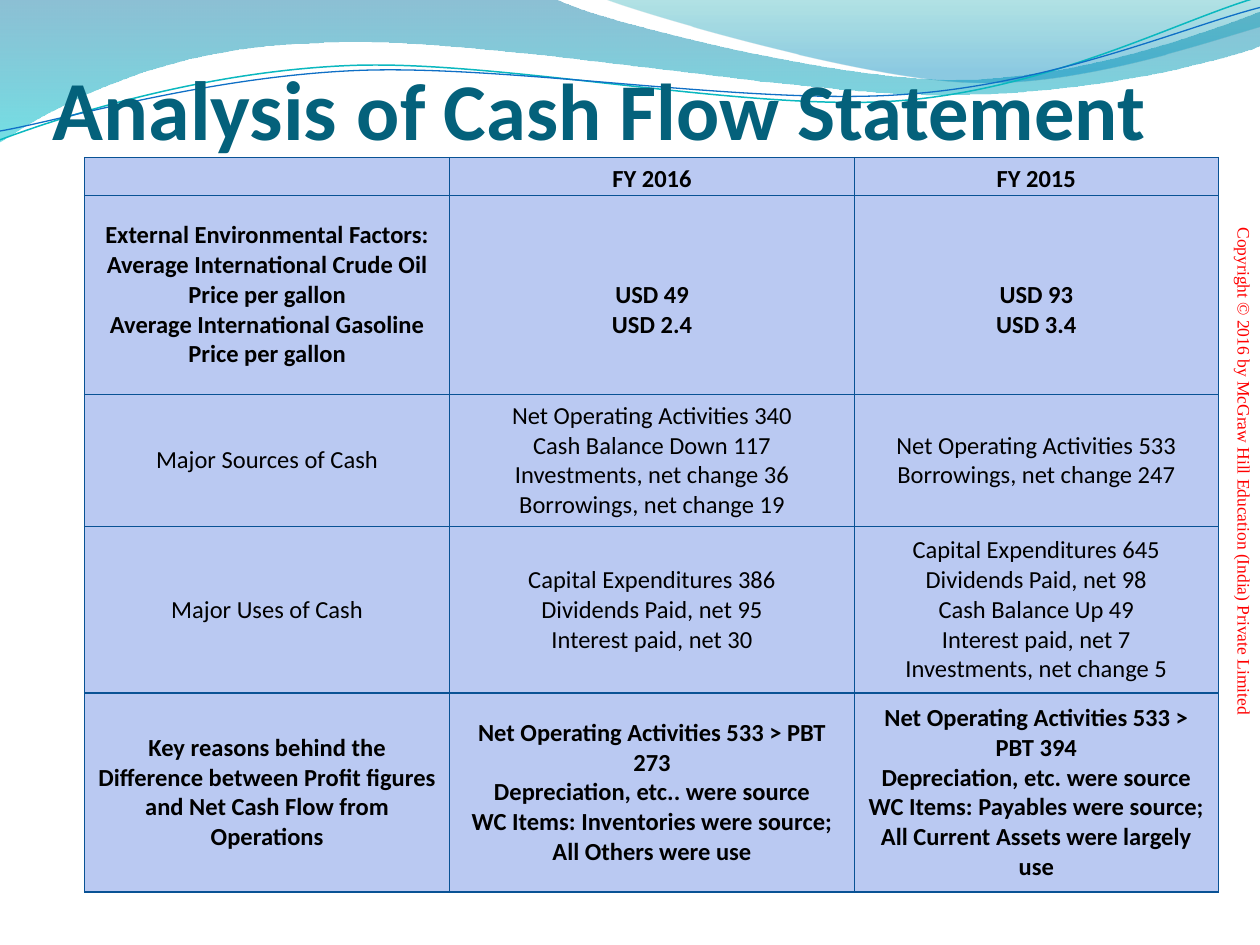
import math
from dataclasses import dataclass

import pptx
import pptx.dml.color
import pptx.enum.text
import pptx.oxml
import pptx.oxml.ns
import pptx.util
from pptx.util import Inches

ALIGN = pptx.enum.text.PP_ALIGN
ANCHOR = pptx.enum.text.MSO_ANCHOR
NAMESPACE = pptx.oxml.ns.nsdecls("a")


@dataclass(frozen=True)
class Theme:
    title: str = "04617B"
    body: str = "000000"
    copyright: str = "FF0000"
    cell: str = "BAC9F2"
    border: str = "095295"
    font: str = "Calibri"
    side_font: str = "Times New Roman"
    title_lead_size: int = 48
    title_size: int = 46
    body_size: int = 14
    side_size: int = 10
    border_width: float = 0.75


THEME = Theme()

# Each outline is a start point, then lines (x, y) or curves (x1, y1, x2, y2, x, y).
# Gradient stops are (position, colour, opacity in percent).
BANDS = [
    ([(0, 0), (4.4, -0.01), (4.76, 0.17, 6.64, 0.63, 7.58, 0.63),
      (8.53, 0.63, 9.58, 0.26, 10, 0.09), (10.01, 0.36),
      (9.83, 0.44, 8.7, 0.76, 7.46, 0.75), (6.22, 0.75, 3.82, 0.28, 2.57, 0.34),
      (1.29, 0.36, 0.46, 0.83, -0.01, 1.13), (0, 0)],
     [(0, "0074A1", 45), (1, "00C6CF", 55)]),
    ([(4.79, -0.01), (5.09, 0.11, 6.82, 0.62, 7.69, 0.65),
      (8.56, 0.69, 9.61, 0.32, 10, 0.21), (10, 0), (4.79, -0.01)],
     [(0, "00A1A9", 30), (0.8, "008BBF", 45)]),
]
# Strands tilt around a pivot; their outlines are given as tilted.
TILT = 357.3
STRANDS = [
    ([(0, 1.11), (0.48, 0.93, 1.58, 0.57, 2.77, 0.52),
      (3.95, 0.47, 5.93, 0.89, 7.13, 0.8), (8.33, 0.71, 9.38, 0.15, 9.98, -0.02)],
     (4.99, 0.57), "0AB8BF", 0.85),
    ([(0, 1.04), (0.47, 0.96, 1.64, 0.61, 2.83, 0.56),
      (4.03, 0.51, 5.97, 0.84, 7.17, 0.75), (8.36, 0.67, 9.41, 0.21, 10, 0.06)],
     (5, 0.59), "0F6FC6", 0.75),
]

COLUMNS = [2.9, 3.21, 2.89]
# Each row is its height, whether it is bold, and the paragraphs of its cells.
ROWS = [
    (0.3, True, [[""], ["FY 2016"], ["FY 2015"]]),
    (1.58, True, [
        ["External Environmental Factors:",
         "Average International Crude Oil Price per gallon",
         "Average International Gasoline Price per gallon"],
        ["USD 49", "USD 2.4"],
        ["USD 93", "USD 3.4"]]),
    (1.05, False, [
        ["Major Sources of Cash"],
        ["Net Operating Activities 340", "Cash Balance Down 117",
         "Investments, net change 36", "Borrowings, net change 19"],
        ["Net Operating Activities 533", "Borrowings, net change 247"]]),
    (1.32, False, [
        ["Major Uses of Cash"],
        ["Capital Expenditures 386", "Dividends Paid, net 95", "Interest paid, net 30"],
        ["Capital Expenditures 645", "Dividends Paid, net 98", "Cash Balance Up 49",
         "Interest paid, net 7", "Investments, net change 5"]]),
    (1.58, True, [
        ["Key reasons behind the Difference between Profit figures and Net Cash Flow "
         "from Operations"],
        ["Net Operating Activities 533 > PBT 273", "Depreciation, etc.. were source",
         "WC Items: Inventories were source; All Others were use"],
        ["Net Operating Activities 533 > PBT 394", "Depreciation, etc. were source",
         "WC Items: Payables were source; All Current Assets were largely use"]]),
]
PRICE_ROW = 1


def rgb(value):
    return pptx.dml.color.RGBColor.from_string(value)


def apply(target, values):
    for name, value in values.items():
        setattr(target, name, value)


def add_span(para, text, size, color, font=THEME.font, bold=False):
    span = para.add_run()
    span.text = text
    apply(span.font, {"name": font, "size": pptx.util.Pt(size), "bold": bold})
    span.font.color.rgb = rgb(color)


def turn(outline, pivot, degrees):
    """Turn every point of an outline clockwise around the pivot."""
    sine, cosine = math.sin(math.radians(degrees)), math.cos(math.radians(degrees))
    turned = []
    for segment in outline:
        offsets = [(x - pivot[0], y - pivot[1])
                   for x, y in zip(segment[::2], segment[1::2])]
        turned.append([n for x, y in offsets for n in
                       (pivot[0] + x * cosine - y * sine,
                        pivot[1] + x * sine + y * cosine)])
    return turned


def add_outline(page, box, outline, close):
    """Draw all points as lines, then join the points of each curve into one node."""
    left, top = box
    points = [(left + Inches(x), top + Inches(y)) for segment in outline
              for x, y in zip(segment[::2], segment[1::2])]
    builder = page.shapes.build_freeform(*points[0])
    builder.add_line_segments(points[1:], close=close)
    shape = builder.convert_to_shape()
    shape.shadow.inherit = False
    nodes = iter(list(shape._element.iter(pptx.oxml.ns.qn("a:lnTo"))))
    for segment in outline[1:]:
        first = next(nodes)
        if len(segment) == 6:
            curve = pptx.oxml.parse_xml(f"<a:cubicBezTo {NAMESPACE}/>")
            first.addprevious(curve)
            for node in (first, next(nodes), next(nodes)):
                curve.append(node[0])
                node.getparent().remove(node)
    return shape


def add_waves(page, box):
    for outline, stops in BANDS:
        band = add_outline(page, box, outline, True)
        band.line.fill.background()
        band.fill.gradient()
        band.fill.gradient_angle = 270
        for stop, (position, color, _) in zip(band.fill.gradient_stops, stops):
            stop.position = position
            stop.color.rgb = rgb(color)
        colors = band._element.spPr.iter(pptx.oxml.ns.qn("a:srgbClr"))
        for node, (_, _, opacity) in zip(colors, stops):
            node.append(pptx.oxml.parse_xml(
                f'<a:alpha {NAMESPACE} val="{opacity * 1000}"/>'))
    for outline, pivot, color, width in STRANDS:
        strand = add_outline(page, box, turn(outline, pivot, 360 - TILT), False)
        strand.rotation = TILT
        strand.fill.background()
        strand.line.color.rgb = rgb(color)
        strand.line.width = pptx.util.Pt(width)


def add_copyright(page, box):
    holder = page.shapes.add_textbox(*box)
    holder.rotation = 90
    apply(holder.text_frame, {"word_wrap": True, "vertical_anchor": ANCHOR.BOTTOM})
    para = holder.text_frame.paragraphs[0]
    para.alignment = ALIGN.CENTER
    add_span(para, "Copyright © 2016 by McGraw Hill Education (India) Private Limited",
             THEME.side_size, THEME.copyright, THEME.side_font)


def place_title(page, box):
    title = page.shapes.title
    apply(title, dict(zip(("left", "top", "width", "height"), box)))
    apply(title.text_frame, {
        "word_wrap": True, "auto_size": pptx.enum.text.MSO_AUTO_SIZE.NONE,
        "vertical_anchor": ANCHOR.BOTTOM, "margin_left": 0, "margin_right": 0,
        "margin_top": Inches(0.05), "margin_bottom": 0})
    para = title.text_frame.paragraphs[0]
    para.alignment = ALIGN.LEFT
    add_span(para, "Analysis ", THEME.title_lead_size, THEME.title, bold=True)
    add_span(para, "of Cash Flow Statement", THEME.title_size, THEME.title, bold=True)
    # Bring the title in front of the waves.
    page.shapes._spTree.append(title._element)


def add_borders(cell):
    properties = cell._tc.get_or_add_tcPr()
    width = pptx.util.Pt(THEME.border_width)
    for index, side in enumerate(("lnL", "lnR", "lnT", "lnB")):
        properties.insert(index, pptx.oxml.parse_xml(
            f'<a:{side} {NAMESPACE} w="{width}"><a:solidFill>'
            f'<a:srgbClr val="{THEME.border}"/></a:solidFill></a:{side}>'))


def fill_cell(cell, lines, bold, side_margin, top_margin, spacing):
    apply(cell, {"vertical_anchor": ANCHOR.MIDDLE, "margin_left": side_margin,
                 "margin_right": side_margin, "margin_top": top_margin,
                 "margin_bottom": 0})
    cell.fill.solid()
    cell.fill.fore_color.rgb = rgb(THEME.cell)
    add_borders(cell)
    frame = cell.text_frame
    for index, line in enumerate(lines):
        para = frame.add_paragraph() if index else frame.paragraphs[0]
        apply(para, {"alignment": ALIGN.CENTER, "line_spacing": spacing})
        if line:
            add_span(para, line, THEME.body_size, THEME.body, bold=bold)
        else:
            para._p.append(pptx.oxml.parse_xml(
                f'<a:endParaRPr {NAMESPACE} sz="{THEME.body_size * 100}"/>'))


def add_cash_flow_table(page, box):
    table = page.shapes.add_table(len(ROWS), len(COLUMNS), *box).table
    for column, width in zip(table.columns, COLUMNS):
        column.width = Inches(width)
    for row, (height, bold, cells) in enumerate(ROWS):
        table.rows[row].height = Inches(height)
        for column, lines in enumerate(cells):
            # Prices sit one line lower, level with the labels beside them.
            lowered = row == PRICE_ROW and column > 0
            fill_cell(table.cell(row, column), lines, bold,
                      side_margin=Inches(0.07 if row else 0.06),
                      top_margin=Inches(0.24 if lowered else 0),
                      spacing=1.0 if row else 1.15)


def main():
    deck = pptx.Presentation()
    apply(deck, {"slide_width": Inches(10), "slide_height": Inches(7.5)})
    page = deck.slides.add_slide(deck.slide_layouts.get_by_name("Title Only"))
    add_waves(page, (0, 0))
    add_copyright(page, [Inches(n) for n in (6.83, 3.49, 6.33, 0.5)])
    place_title(page, [Inches(n) for n in (0.42, 0.42, 9.08, 0.83)])
    add_cash_flow_table(page, [Inches(n) for n in (0.67, 1.25, 9, 5.83)])
    deck.save("out.pptx")


if __name__ == "__main__":
    main()
